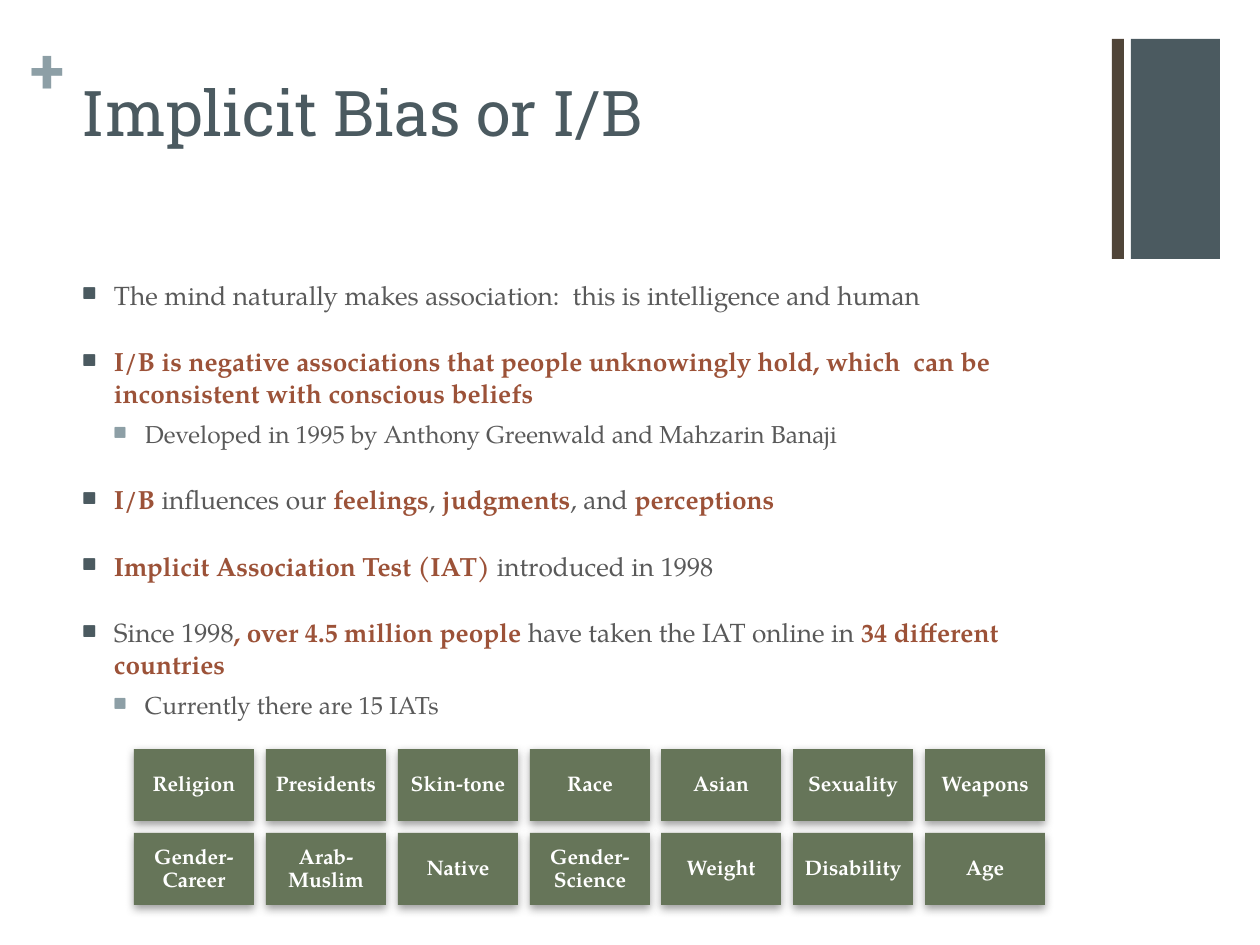
import dataclasses

import lxml.etree
import pptx
import pptx.dml.color
import pptx.enum.shapes
import pptx.enum.text
import pptx.oxml.ns
import pptx.util

EMU_PER_PX = 914400 / 126
HEADING_FONT = "Roboto Slab"
BODY_FONT = "TeX Gyre Pagella"
SLATE, PALE_SLATE, BROWN = "4B5A60", "8D9FA6", "504539"
GREY, RUST, GREEN, WHITE = "595959", "9C5238", "667559", "FFFFFF"

ANCHOR = pptx.enum.text.MSO_ANCHOR
ALIGN = pptx.enum.text.PP_ALIGN


@dataclasses.dataclass(frozen=True)
class Box:
    left: int
    top: int
    width: int
    height: int


@dataclasses.dataclass(frozen=True)
class Span:
    text: str
    strong: bool = False


@dataclasses.dataclass(frozen=True)
class Bullet:
    spans: tuple[Span, ...]
    level: int = 0


@dataclasses.dataclass(frozen=True)
class LevelStyle:
    size: int
    before: int
    indent: int
    bullet_color: str


LEVELS = (LevelStyle(15, 20, 32, SLATE), LevelStyle(14, 6, 63, PALE_SLATE))
HANGING = 32

BULLETS = (
    Bullet((Span("The mind naturally makes association:  this is intelligence and human"),)),
    Bullet((Span("I/B is negative associations that people unknowingly hold, which  can be "
                 "inconsistent with conscious beliefs", True),)),
    Bullet((Span("Developed in 1995 by Anthony Greenwald and Mahzarin Banaji"),), 1),
    Bullet((Span("I/B ", True), Span("influences our "), Span("feelings", True), Span(","),
            Span(" judgments", True), Span(", and "), Span("perceptions", True))),
    Bullet((Span("Implicit Association Test (IAT) ", True), Span("introduced in 1998"))),
    Bullet((Span("Since 1998"), Span(", over 4.5 million people ", True),
            Span("have taken the IAT online in "), Span("34 different countries", True))),
    Bullet((Span("Currently there are 15 IATs"),), 1),
)

TESTS = (
    ("Religion", "Presidents", "Skin-tone", "Race", "Asian", "Sexuality", "Weapons"),
    ("Gender-Career", "Arab-Muslim", "Native", "Gender-Science", "Weight", "Disability", "Age"),
)
FIRST_TILE = Box(134, 749, 120, 72)
LAST_TILE_LEFT = 925
ROW_PITCH = 84


def px(value: int) -> pptx.util.Emu:
    return pptx.util.Emu(round(value * EMU_PER_PX))


def rgb(color: str) -> pptx.dml.color.RGBColor:
    return pptx.dml.color.RGBColor.from_string(color)


def place(sp, box: Box) -> None:
    sp.left, sp.top = px(box.left), px(box.top)
    sp.width, sp.height = px(box.width), px(box.height)


def set_frame(tf, inset_x: int, inset_y: int, anchor=ANCHOR.TOP, wrap: bool = True) -> None:
    tf.auto_size = pptx.enum.text.MSO_AUTO_SIZE.NONE
    tf.word_wrap = wrap
    tf.vertical_anchor = anchor
    tf.margin_left = tf.margin_right = px(inset_x)
    tf.margin_top = tf.margin_bottom = px(inset_y)


def add_run(p, text: str, size: int, color: str, font: str, bold: bool = False) -> None:
    r = p.add_run()
    r.text = text
    r.font.name = font
    r.font.size = pptx.util.Pt(size)
    r.font.bold = bold
    r.font.color.rgb = rgb(color)


def add_xml(parent, tag: str, **attributes: str):
    return lxml.etree.SubElement(parent, pptx.oxml.ns.qn(tag), attributes)


def add_rect(s, box: Box, color: str):
    sp = s.shapes.add_shape(pptx.enum.shapes.MSO_SHAPE.RECTANGLE, 0, 0, 0, 0)
    place(sp, box)
    sp.shadow.inherit = False
    sp.fill.solid()
    sp.fill.fore_color.rgb = rgb(color)
    sp.line.fill.background()
    return sp


def add_shadow(sp) -> None:
    effects = sp._element.spPr.find(pptx.oxml.ns.qn("a:effectLst"))
    shadow = add_xml(effects, "a:outerShdw", blurRad=str(pptx.util.Pt(5)),
                     dist=str(pptx.util.Pt(2)), dir="5400000", rotWithShape="0")
    color = add_xml(shadow, "a:srgbClr", val="808080")
    add_xml(color, "a:alpha", val="75000")


def add_tile(s, box: Box, label: str) -> None:
    sp = add_rect(s, box, GREEN)
    add_shadow(sp)
    set_frame(sp.text_frame, 6, 6, ANCHOR.MIDDLE)
    p = sp.text_frame.paragraphs[0]
    p.alignment = ALIGN.CENTER
    p.line_spacing = 0.9
    add_run(p, label, 12, WHITE, BODY_FONT, True)


def add_tiles(s) -> None:
    for row, labels in enumerate(TESTS):
        for col, label in enumerate(labels):
            offset = round(col * (LAST_TILE_LEFT - FIRST_TILE.left) / (len(labels) - 1))
            add_tile(s, dataclasses.replace(FIRST_TILE, left=FIRST_TILE.left + offset,
                                            top=FIRST_TILE.top + row * ROW_PITCH), label)


def add_plus(s) -> None:
    sp = s.shapes.add_textbox(0, 0, 0, 0)
    place(sp, Box(31, 31, 36, 77))
    set_frame(sp.text_frame, 0, 0, wrap=False)
    add_run(sp.text_frame.paragraphs[0], "+", 36, PALE_SLATE, HEADING_FONT, True)


def fill_title(sp) -> None:
    place(sp, Box(69, 67, 1041, 154))
    set_frame(sp.text_frame, 13, 6)
    p = sp.text_frame.paragraphs[0]
    p.alignment = ALIGN.LEFT
    add_run(p, "Implicit Bias or I/B", 36, SLATE, HEADING_FONT)


def format_bullet(p, style: LevelStyle) -> None:
    pPr = p._p.get_or_add_pPr()
    pPr.set("marL", str(px(style.indent)))
    pPr.set("indent", str(-px(HANGING)))
    color = add_xml(pPr, "a:buClr")
    add_xml(color, "a:srgbClr", val=style.bullet_color)
    add_xml(pPr, "a:buSzPct", val="75000")
    add_xml(pPr, "a:buFont", typeface=BODY_FONT)
    add_xml(pPr, "a:buChar", char="■")


def fill_body(sp) -> None:
    place(sp, Box(69, 273, 1041, 651))
    tf = sp.text_frame
    set_frame(tf, 13, 6)
    for index, bullet in enumerate(BULLETS):
        p = tf.add_paragraph() if index else tf.paragraphs[0]
        style = LEVELS[bullet.level]
        p.level = bullet.level
        format_bullet(p, style)
        p.alignment = ALIGN.LEFT
        p.space_before = pptx.util.Pt(style.before if index else 0)
        for span in bullet.spans:
            add_run(p, span.text, style.size, RUST if span.strong else GREY,
                    BODY_FONT, span.strong)


def main() -> None:
    prs = pptx.Presentation()
    prs.slide_width, prs.slide_height = px(1260), px(945)
    s = prs.slides.add_slide(prs.slide_layouts[1])
    add_rect(s, Box(1131, 39, 89, 220), SLATE)
    add_plus(s)
    add_rect(s, Box(1112, 39, 12, 220), BROWN)
    fill_title(s.shapes.title)
    fill_body(s.placeholders[1])
    add_tiles(s)
    prs.save("out.pptx")


if __name__ == "__main__":
    main()
